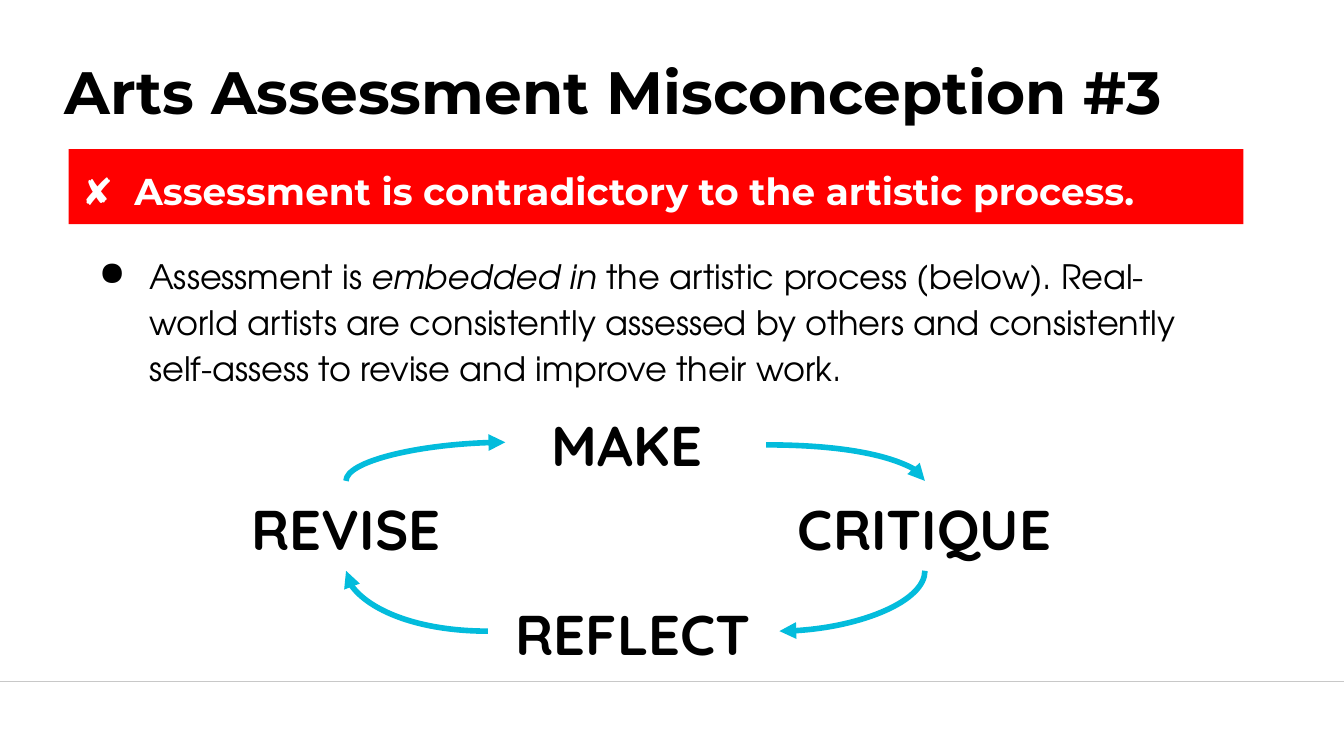
import pptx
import pptx.dml.color
import pptx.enum.shapes
import pptx.enum.text
import pptx.oxml.ns
import pptx.util
from dataclasses import dataclass
from lxml import etree

Cm = pptx.util.Cm
Pt = pptx.util.Pt
Kind = pptx.enum.shapes.MSO_CONNECTOR
Align = pptx.enum.text.PP_ALIGN
Anchor = pptx.enum.text.MSO_ANCHOR
qn = pptx.oxml.ns.qn


@dataclass(frozen=True)
class Theme:
    ink: str = "000000"
    paper: str = "FFFFFF"
    alert: str = "FF0000"
    cyan: str = "03BCDC"
    rule: str = "C8C8C8"
    head: str = "Montserrat"
    text: str = "TeX Gyre Adventor"
    label: str = "Quicksand"
    title: int = 32
    word: int = 30
    claim: int = 20
    body: int = 18


theme = Theme()


def color(code):
    return pptx.dml.color.RGBColor.from_string(code)


def style(para, face, size, code, bold=False):
    font = para.font
    font.name, font.size, font.bold = face, Pt(size), bold
    font.color.rgb = color(code)


def setup(shape, side=0.25, edge=0.25, anchor=Anchor.TOP):
    frame = shape.text_frame
    frame.word_wrap = True
    frame.margin_left = frame.margin_right = Cm(side)
    frame.margin_top = frame.margin_bottom = Cm(edge)
    frame.vertical_anchor = anchor
    return frame.paragraphs[0]


def place(shapes, box):
    return shapes.add_textbox(*map(Cm, box))


def link(shapes, kind, start, end, code, width):
    line = shapes.add_connector(kind, *map(Cm, (*start, *end)))
    line.line.color.rgb = color(code)
    line.line.width = Pt(width)
    etree.SubElement(line._element.spPr, qn("a:effectLst"))
    return line


def title(slide, box):
    para = setup(place(slide.shapes, box), 0.18, 0.1, Anchor.MIDDLE)
    para.text = "Arts Assessment Misconception #3"
    para.line_spacing = 1.15
    style(para, theme.head, theme.title, theme.ink, True)


def banner(slide, box):
    rect = pptx.enum.shapes.MSO_SHAPE.RECTANGLE
    shape = slide.shapes.add_shape(rect, *map(Cm, box))
    shape.shadow.inherit = False
    shape.fill.solid()
    shape.fill.fore_color.rgb = color(theme.alert)
    shape.line.fill.background()
    para = setup(shape)
    para.text = "✘  Assessment is contradictory to the artistic process."
    para.alignment = Align.LEFT
    para.line_spacing = 1.14
    para.space_after = Pt(6)
    style(para, theme.head, theme.claim, theme.paper, True)


def body(slide, box):
    para = setup(place(slide.shapes, box))
    para.line_spacing = 1.15
    para.space_after = Pt(6)
    props = para._p.get_or_add_pPr()
    props.set("marL", str(Cm(1.27)))
    props.set("indent", str(Cm(-0.95)))
    tint = etree.SubElement(props, qn("a:buClr"))
    etree.SubElement(tint, qn("a:srgbClr"), val=theme.ink)
    etree.SubElement(props, qn("a:buChar"), char="●")
    style(para, theme.text, theme.body, theme.ink)
    for text, slant in (
        ("Assessment is ", False),
        ("embedded in", True),
        (" the artistic process (below). Real-world artists are consistently "
         "assessed by others and consistently self-assess to revise and "
         "improve their work.", False),
    ):
        run = para.add_run()
        run.text = text
        run.font.italic = slant


def arc(shapes, start, end, turn):
    mid = [(a + b) / 2 for a, b in zip(start, end)]
    half = [abs(a - b) / 2 for a, b in zip(start, end)]
    if turn % 180:
        half.reverse()
    low = [m - h for m, h in zip(mid, half)]
    high = [m + h for m, h in zip(mid, half)]
    line = link(shapes, Kind.CURVE, low, high, theme.cyan, 3)
    props = line._element.spPr
    props.find(qn("a:prstGeom")).set("prst", "curvedConnector2")
    props.find(qn("a:xfrm")).set("rot", str(turn * 60000))
    etree.SubElement(props.find(qn("a:ln")), qn("a:tailEnd"), type="triangle")


def cycle(slide, box):
    left, top, wide, high = box
    shapes = slide.shapes.add_group_shape().shapes
    tall = 1.7
    side = 1.57
    broad = 5.49
    slim = 4.6
    for text, x, y, width in (
        ("REVISE", 0, side, slim),
        ("MAKE", 5.31, 0, slim),
        ("CRITIQUE", wide - broad, side, broad),
        ("REFLECT", 4.98, high - tall, broad),
    ):
        para = setup(place(shapes, (left + x, top + y, width, tall)))
        para.text = text
        para.alignment = Align.CENTER
        style(para, theme.label, theme.word, theme.ink, True)
    west, east = 2.3, 13.24
    under = side + tall
    base = high - tall / 2
    arcs = (
        ((10.24, 0.89), (east, side)),
        ((east, under), (10.49, base)),
        ((4.98, base), (west, under)),
        ((west, side), (5.31, 0.84)),
    )
    for step, ends in enumerate(arcs):
        start, end = ((left + x, top + y) for x, y in ends)
        arc(shapes, start, end, step * 90)


def main():
    deck = pptx.Presentation()
    deck.slide_width, deck.slide_height = Cm(25.4), Cm(14.29)
    slide = deck.slides.add_slide(deck.slide_layouts[6])
    link(slide.shapes, Kind.STRAIGHT, (0, 12.88), (25.4, 12.88), theme.rule, 0.75)
    body(slide, (1.3, 4.47, 21.89, 2.92))
    title(slide, (1.04, 0.61, 21.39, 2.01))
    cycle(slide, (4.24, 7.52, 15.98, 5.26))
    banner(slide, (1.3, 2.82, 22.2, 1.42))
    deck.save("out.pptx")


if __name__ == "__main__":
    main()
